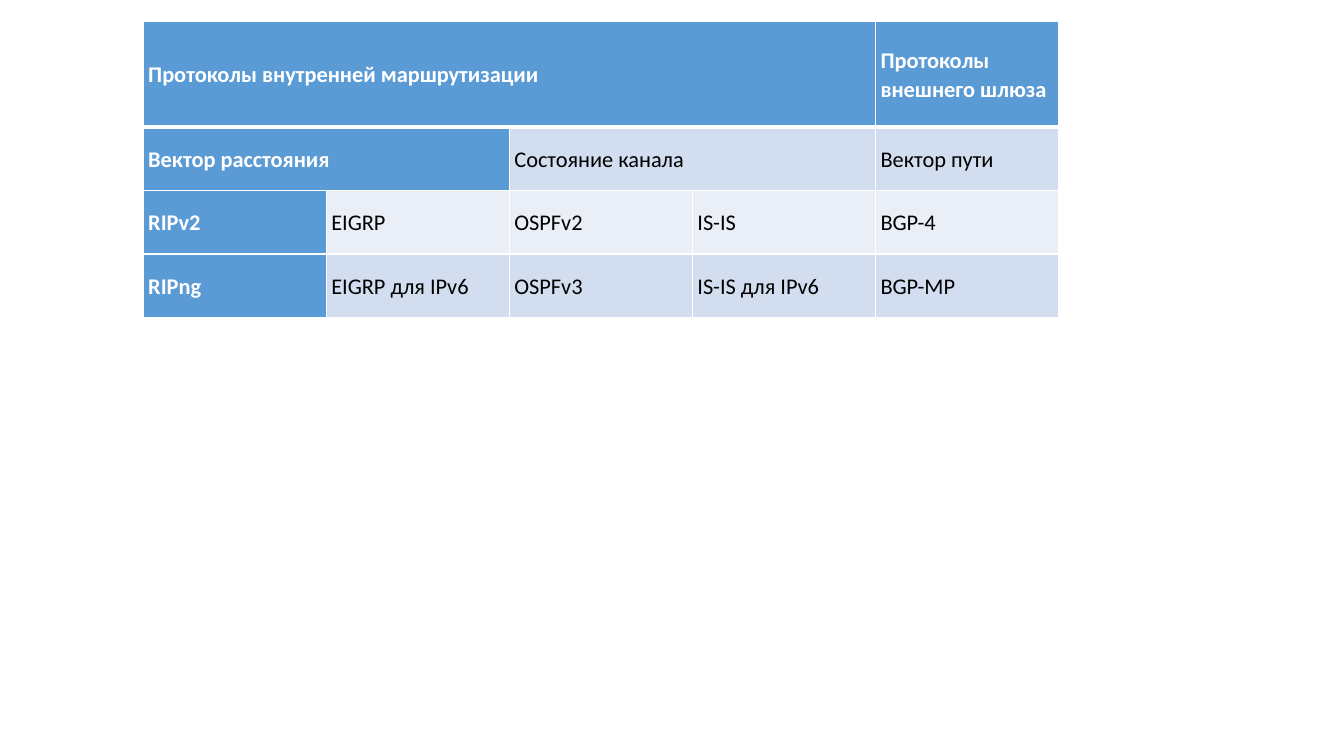
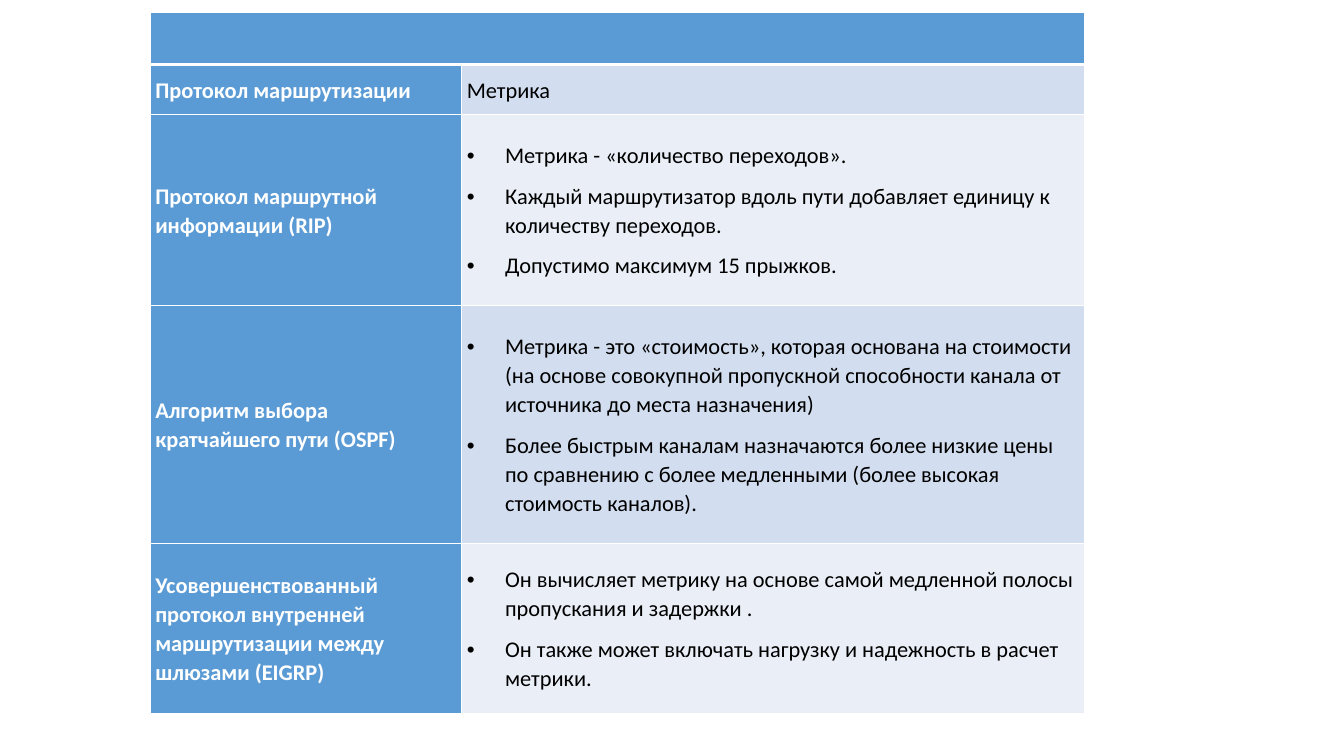
import pptx
import pptx.dml.color
import pptx.enum.text
import pptx.oxml
import pptx.oxml.ns
import pptx.util
from pptx.util import Inches

BLUE, PALE, LIGHT = "5B9BD5", "D2DEEF", "EAEFF7"
WHITE, BLACK = "FFFFFF", "000000"
NS = pptx.oxml.ns.nsdecls("a")


def color(code):
    return pptx.dml.color.RGBColor.from_string(code)


def add_grid(slide, left, top, widths, heights, rows):
    """Draw a table; None continues the cell to its left, a list is bulleted."""
    frame = slide.shapes.add_table(
        len(heights), len(widths), Inches(left), Inches(top),
        Inches(sum(widths)), Inches(sum(heights)))
    table = frame.table
    for col, width in zip(table.columns, widths):
        col.width = Inches(width)
    for row, height in zip(table.rows, heights):
        row.height = Inches(height)

    for r, row in enumerate(rows):
        for c, text in enumerate(row):
            cell = table.cell(r, c)
            head = r == 0 or c == 0
            for side in "LRTB":
                thick = (r, side) in ((0, "B"), (1, "T"))
                size = pptx.util.Pt(3 if thick else 1)
                cell._tc.get_or_add_tcPr().append(pptx.oxml.parse_xml(
                    f'<a:ln{side} {NS} w="{size}"><a:solidFill>'
                    f'<a:srgbClr val="{WHITE}"/></a:solidFill></a:ln{side}>'))
            cell.fill.solid()
            band = PALE if r % 2 else LIGHT
            cell.fill.fore_color.rgb = color(BLUE if head else band)
            cell.vertical_anchor = pptx.enum.text.MSO_ANCHOR.MIDDLE
            cell.margin_left = cell.margin_right = Inches(0.05)
            cell.margin_top = cell.margin_bottom = Inches(0.05)
            if not text:
                continue

            end = c
            while end + 1 < len(row) and row[end + 1] is None:
                end += 1
            if end > c:
                cell.merge(table.cell(r, end))

            listed = isinstance(text, list)
            for i, line in enumerate(text if listed else [text]):
                body = cell.text_frame
                para = body.add_paragraph() if i else body.paragraphs[0]
                para.line_spacing = 1.07
                if listed:
                    para.space_after = pptx.util.Pt(8)
                    props = para._p.get_or_add_pPr()
                    props.set("marL", str(Inches(0.38)))
                    props.set("indent", str(-Inches(0.38)))
                    for mark in ('buFont {} typeface="Arial"', 'buChar {} char="•"'):
                        props.append(pptx.oxml.parse_xml(f"<a:{mark.format(NS)}/>"))
                run = para.add_run()
                run.text = line
                run.font.name = "Calibri"
                run.font.size = pptx.util.Pt(16)
                run.font.bold = head
                run.font.color.rgb = color(WHITE if head else BLACK)
    return table


deck = pptx.Presentation()
deck.slide_width, deck.slide_height = Inches(13.33), Inches(7.5)
blank = deck.slide_layouts[6]

# Protocol families
kinds = [
    ["Протоколы внутренней маршрутизации", None, None, None,
     "Протоколы внешнего шлюза"],
    ["Вектор расстояния", None, "Состояние канала", None, "Вектор пути"],
    ["RIPv2", "EIGRP", "OSPFv2", "IS-IS", "BGP-4"],
    ["RIPng", "EIGRP для IPv6", "OSPFv3", "IS-IS для IPv6", "BGP-MP"],
]
add_grid(deck.slides.add_slide(blank), 1.42, 0.21,
         [9.08 / 5] * 5, [1.05] + [0.63] * 3, kinds)

# Metrics by protocol
costs = [
    ["", None],
    ["Протокол маршрутизации", "Метрика"],
    ["Протокол маршрутной информации (RIP)", [
        "Метрика - «количество переходов».",
        "Каждый маршрутизатор вдоль пути добавляет единицу к количеству переходов.",
        "Допустимо максимум 15 прыжков."]],
    ["Алгоритм выбора кратчайшего пути (OSPF)", [
        "Метрика - это «стоимость», которая основана на стоимости (на основе "
        "совокупной пропускной способности канала от источника до места назначения)",
        "Более быстрым каналам назначаются более низкие цены по сравнению "
        "с более медленными (более высокая стоимость каналов)."]],
    ["Усовершенствованный протокол внутренней маршрутизации между шлюзами (EIGRP)", [
        "Он вычисляет метрику на основе самой медленной полосы пропускания и задержки .",
        "Он также может включать нагрузку и надежность в расчет метрики."]],
]
table = add_grid(deck.slides.add_slide(blank), 1.49, 0.12,
                 [3.09, 6.18], [0.52, 0.5, 1.89, 2.36, 1.69], costs)
table.cell(0, 0).merge(table.cell(0, 1))

deck.save("out.pptx")
